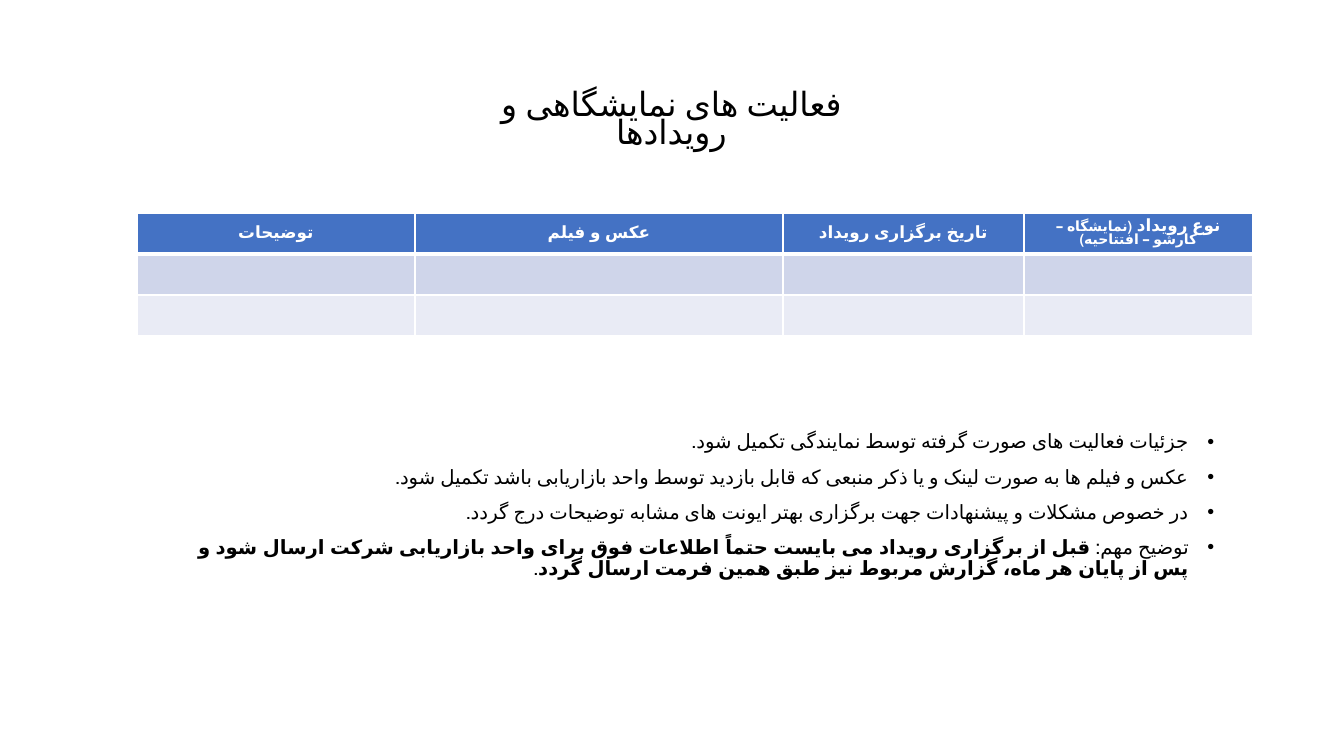
from dataclasses import dataclass

from lxml import etree
from pptx import Presentation
from pptx import util as u
from pptx.dml.color import RGBColor
from pptx.enum import lang, text
from pptx.oxml import ns

EMU_PER_PX = 914400 / 100.8


def px(length):
    return u.Emu(round(length * EMU_PER_PX))


@dataclass(frozen=True)
class Theme:
    font: str = "Arial"
    ink: str = "000000"
    paper: str = "FFFFFF"
    header: str = "4472C4"
    bands: tuple = ("CFD5EA", "E9EBF5")
    title_size: float = 23.8
    body_size: int = 14
    header_size: int = 12
    detail_size: int = 10


class Deck:
    def __init__(self, theme):
        self.theme = theme
        self.presentation = Presentation()
        self.presentation.slide_width = px(1344)
        self.presentation.slide_height = px(756)
        self.slide = self.presentation.slides.add_slide(
            self.presentation.slide_layouts[6])

    def run(self, paragraph, words, size, color, bold=False):
        run = paragraph.add_run()
        run.text = words
        run.font.size = u.Pt(size)
        run.font.bold = bold
        run.font.name = self.theme.font
        run.font.language_id = lang.MSO_LANGUAGE_ID.FARSI
        run.font.color.rgb = RGBColor.from_string(color)

    def frame(self, left, top, width, height):
        frame = self.slide.shapes.add_textbox(
            px(left), px(top), px(width), px(height)).text_frame
        frame.word_wrap = True
        return frame

    def title(self, words, *box):
        paragraph = self.frame(*box).paragraphs[0]
        paragraph.alignment = text.PP_ALIGN.CENTER
        paragraph.line_spacing = 0.7
        self.run(paragraph, words, self.theme.title_size, self.theme.ink)

    def bullets(self, notes, *box):
        """Right-to-left list; each note is a list of (words, bold) runs."""
        frame = self.frame(*box)
        for index, note in enumerate(notes):
            paragraph = frame.add_paragraph() if index else frame.paragraphs[0]
            properties = paragraph._p.get_or_add_pPr()
            indent = u.Inches(0.25)
            properties.set("marL", str(indent))
            properties.set("indent", str(-indent))
            properties.set("rtl", "1")
            etree.SubElement(properties, ns.qn("a:buFont")).set("typeface", self.theme.font)
            etree.SubElement(properties, ns.qn("a:buChar")).set("char", "•")
            paragraph.alignment = text.PP_ALIGN.RIGHT
            paragraph.line_spacing = 0.9
            paragraph.space_before = u.Pt(10 if index else 0)
            for words, bold in note:
                self.run(paragraph, words, self.theme.body_size, self.theme.ink, bold)

    def cell_style(self, cell, fill, top=1, bottom=1):
        properties = cell._tc.get_or_add_tcPr()
        for side, points in (("L", 1), ("R", 1), ("T", top), ("B", bottom)):
            border = etree.SubElement(properties, ns.qn(f"a:ln{side}"), w=str(u.Pt(points)))
            paint = etree.SubElement(border, ns.qn("a:solidFill"))
            etree.SubElement(paint, ns.qn("a:srgbClr"), val=self.theme.paper)
        cell.fill.solid()
        cell.fill.fore_color.rgb = RGBColor.from_string(fill)

    def table(self, headings, widths, row_height, left, top):
        """Header row of (words, size) runs above one empty row per band."""
        bands = self.theme.bands
        rows = len(bands) + 1
        table = self.slide.shapes.add_table(
            rows, len(widths), px(left), px(top),
            px(sum(widths)), px(row_height * rows)).table
        for column, width in zip(table.columns, widths):
            column.width = px(width)
        for row in table.rows:
            row.height = px(row_height)
        for column, heading in enumerate(headings):
            cell = table.cell(0, column)
            self.cell_style(cell, self.theme.header, bottom=3)
            cell.vertical_anchor = text.MSO_ANCHOR.MIDDLE
            cell.margin_top = cell.margin_bottom = 0
            paragraph = cell.text_frame.paragraphs[0]
            paragraph.alignment = text.PP_ALIGN.CENTER
            paragraph.line_spacing = 0.9
            for words, size in heading:
                self.run(paragraph, words, size, self.theme.paper, bold=True)
            for row, band in enumerate(bands, start=1):
                self.cell_style(table.cell(row, column), band, top=3 if row == 1 else 1)


def main():
    theme = Theme()
    deck = Deck(theme)
    deck.title("فعالیت های نمایشگاهی و رویدادها", 439, 89, 465, 39)
    deck.bullets([
        [("جزئیات فعالیت های صورت گرفته توسط نمایندگی تکمیل شود.", False)],
        [("عکس و فیلم ها به صورت لینک و یا ذکر منبعی که قابل بازدید توسط واحد "
          "بازاریابی باشد تکمیل شود.", False)],
        [("در خصوص مشکلات و پیشنهادات جهت برگزاری بهتر ایونت های مشابه "
          "توضیحات درج گردد.", False)],
        [("توضیح مهم: ", False),
         ("قبل از برگزاری رویداد می بایست حتماً اطلاعات فوق برای واحد بازاریابی "
          "شرکت ارسال شود و پس از پایان هر ماه، گزارش مربوط نیز طبق همین فرمت "
          "ارسال گردد", True),
         (".", False)],
    ], 150, 427, 1074, 208)
    deck.table([
        [("توضیحات", theme.header_size)],
        [("عکس و فیلم", theme.header_size)],
        [("تاریخ برگزاری رویداد", theme.header_size)],
        [("نوع رویداد ", theme.header_size),
         ("(نمایشگاه – کارشو – افتتاحیه)", theme.detail_size)],
    ], widths=(278, 368, 241, 229), row_height=41, left=137, top=213)
    deck.presentation.save("out.pptx")


if __name__ == "__main__":
    main()
